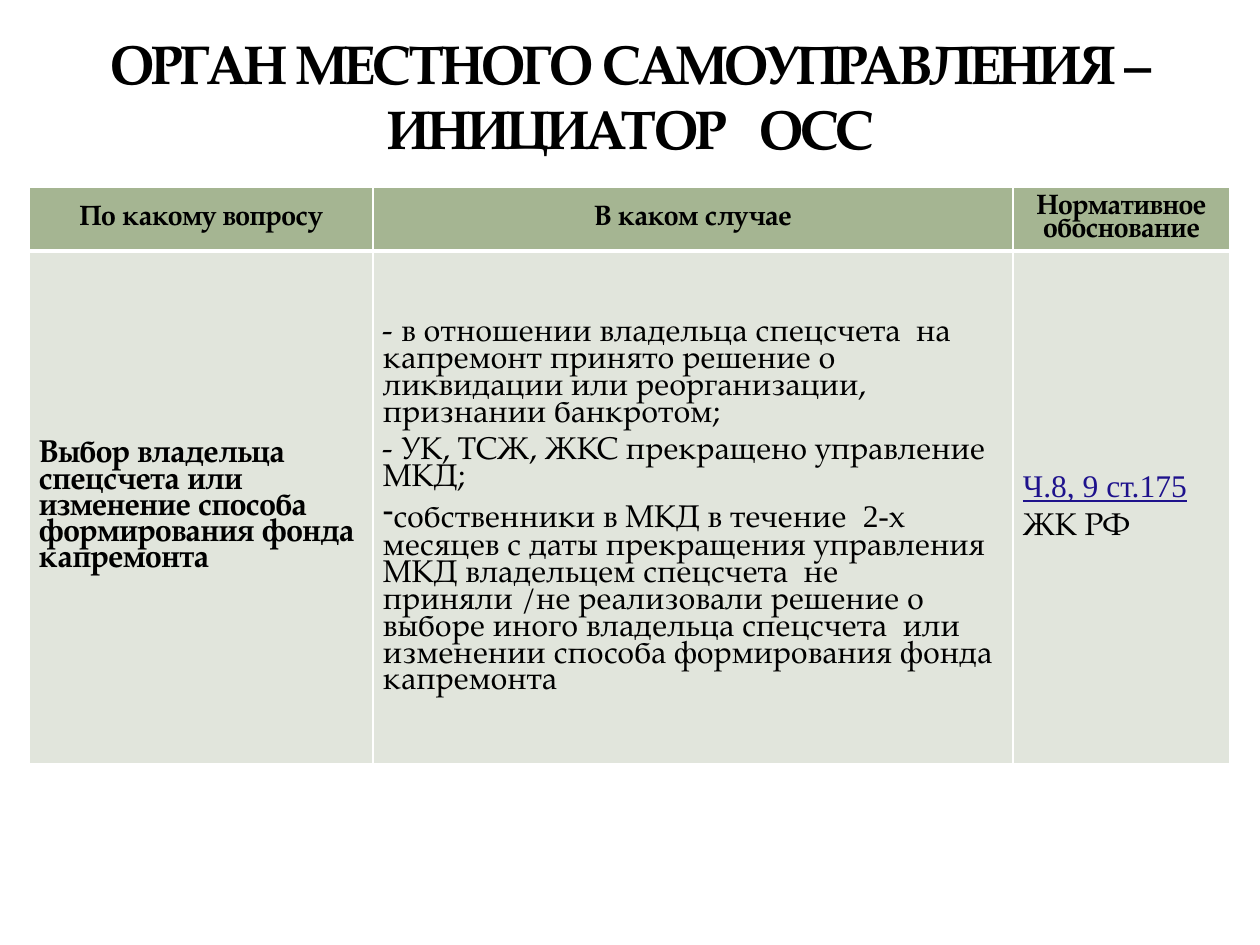
"""Build a slide on when a local authority initiates an owners' meeting."""
import lxml.etree
import pptx
import pptx.dml.color
import pptx.enum.text
import pptx.oxml
import pptx.oxml.ns
import pptx.util

PX = 914400 // 126
THEME = {
    "serif": "TeX Gyre Pagella", "digits": "Times New Roman",
    "ink": "000000", "link": "1E128C", "rule": "FFFFFF", "outline": "E0DDB1",
    "head": "A5B592", "body": "E1E5DC",
    "title_size": 31, "head_size": 16, "body_size": 18,
}
CENTER = pptx.enum.text.PP_ALIGN.CENTER
LEFT = pptx.enum.text.PP_ALIGN.LEFT
MIDDLE = pptx.enum.text.MSO_ANCHOR.MIDDLE
qn = pptx.oxml.ns.qn


def add_span(para, text, size, font="serif", color="ink", bold=False, underline=False):
    span = para.add_run()
    span.text = text
    values = {"name": THEME[font], "size": pptx.util.Pt(size), "bold": bold, "underline": underline}
    for name, value in values.items():
        setattr(span.font, name, value)
    span.font.color.rgb = pptx.dml.color.RGBColor.from_string(THEME[color])
    return span


def line_xml(tag, color, width, alpha=100):
    return pptx.oxml.parse_xml(
        f'<a:{tag} xmlns:a="http://schemas.openxmlformats.org/drawingml/2006/main" w="{int(width * 12700)}">'
        f'<a:solidFill><a:srgbClr val="{THEME[color]}"><a:alpha val="{alpha * 1000}"/></a:srgbClr></a:solidFill>'
        f'<a:prstDash val="solid"/></a:{tag}>')


deck = pptx.Presentation()
deck.slide_width, deck.slide_height = 1260 * PX, 945 * PX
page = deck.slides.add_slide(deck.slide_layouts[5])

title = page.shapes.title
for name, value in {"left": 63, "top": 21, "width": 1134, "height": 146}.items():
    setattr(title, name, value * PX)
title.text_frame.vertical_anchor = pptx.enum.text.MSO_ANCHOR.BOTTOM
title.text_frame.word_wrap = True
title_para = title.text_frame.paragraphs[0]
title_para.alignment = CENTER
title_span = add_span(title_para, "ОРГАН МЕСТНОГО САМОУПРАВЛЕНИЯ –ИНИЦИАТОР   ОСС",
                      THEME["title_size"], bold=True)
title_format = title_span.font._element
title_format.set("spc", "-100")
title_format.insert(0, line_xml("ln", "outline", 0.25, 25))

# Each cell is a list of paragraphs, each paragraph a list of (text, format) spans.
strong = {"bold": True}
rows = [
    [[[("По какому вопросу", strong)]],
     [[("В каком случае", strong)]],
     [[("Нормативное обоснование", strong)]]],
    [[[("Выбор владельца спецсчета или изменение способа формирования фонда капремонта", strong)]],
     [[("- в отношении владельца спецсчета  на капремонт принято решение о ликвидации "
        "или реорганизации, признании банкротом;", {})],
      [("- УК, ТСЖ, ЖКС прекращено управление МКД;", {})],
      [("собственники в МКД в течение  ", {}), ("2-", {"font": "digits"}),
       ("х месяцев с даты прекращения управления МКД владельцем спецсчета  не приняли "
        "/не реализовали решение о выборе иного владельца спецсчета  или изменении "
        "способа формирования фонда капремонта", {})]],
     [[("Ч.8, 9 ст.175", {"font": "digits", "color": "link", "underline": True})],
      [("ЖК РФ", {})]]],
]
widths, heights = [344, 640, 217], [64, 513]
table = page.shapes.add_table(2, 3, 29 * PX, 187 * PX, sum(widths) * PX, sum(heights) * PX).table
for column, width in zip(table.columns, widths):
    column.width = width * PX
for row_index, (row, kind) in enumerate(zip(rows, ("head", "body"))):
    table.rows[row_index].height = heights[row_index] * PX
    for column_index, paragraphs in enumerate(row):
        cell = table.cell(row_index, column_index)
        cell.vertical_anchor = MIDDLE
        for side, margin in {"left": 10, "right": 10, "top": 5, "bottom": 5}.items():
            setattr(cell, f"margin_{side}", margin * PX)
        cell.fill.solid()
        cell.fill.fore_color.rgb = pptx.dml.color.RGBColor.from_string(THEME[kind])
        borders = {"lnL": 1, "lnR": 1, "lnT": 3 if kind == "body" else 1, "lnB": 3 if kind == "head" else 1}
        for position, (tag, width) in enumerate(borders.items()):
            cell._tc.tcPr.insert(position, line_xml(tag, "rule", width))
        for index, spans in enumerate(paragraphs):
            para = cell.text_frame.paragraphs[0] if index == 0 else cell.text_frame.add_paragraph()
            layout = {"alignment": CENTER if kind == "head" else LEFT,
                      "line_spacing": 0.85, "space_after": pptx.util.Pt(6)}
            for name, value in layout.items():
                setattr(para, name, value)
            if len(spans) > 1:
                bullet = lxml.etree.SubElement(para._p.get_or_add_pPr(), qn("a:buChar"))
                bullet.set("char", "-")
            for text, values in spans:
                add_span(para, text, THEME[f"{kind}_size"], **values)

deck.save("out.pptx")
